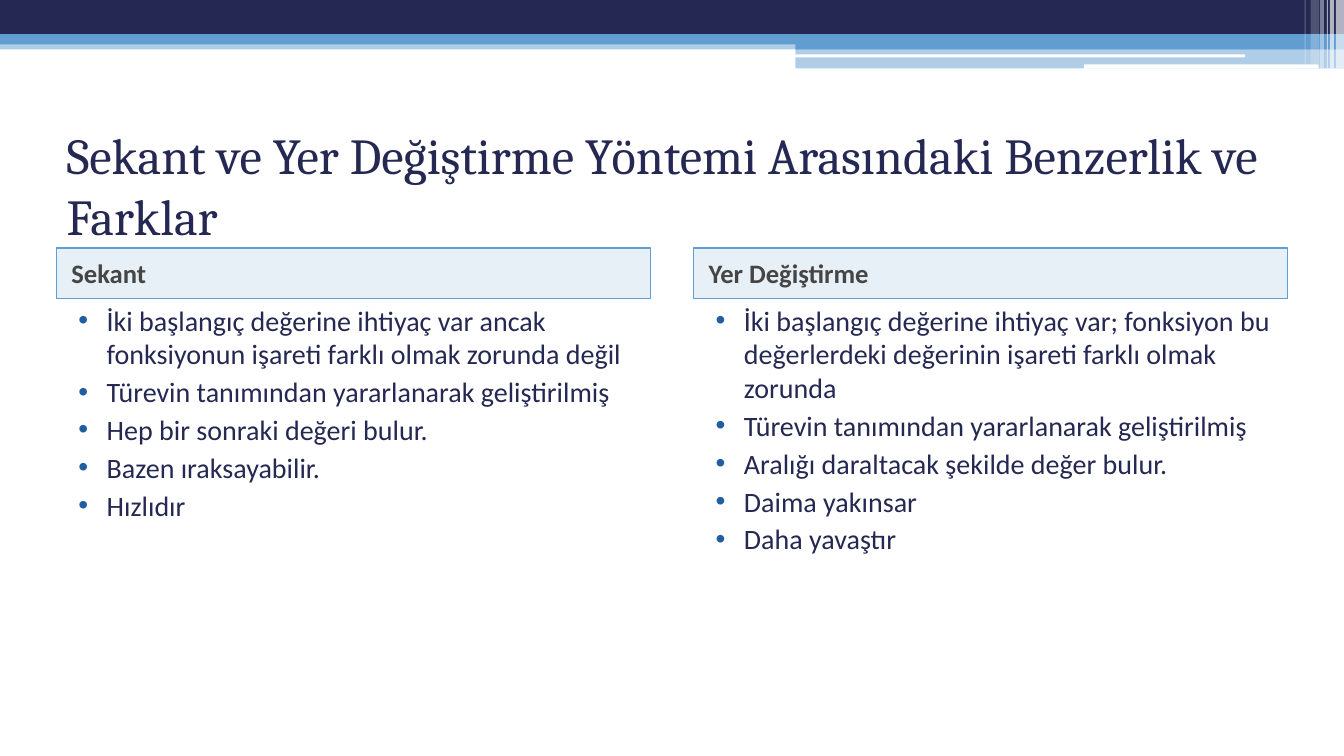
from lxml.etree import SubElement as Sub
from pptx import Presentation as Deck
from pptx.dml.color import RGBColor as RGB
from pptx.enum.shapes import MSO_SHAPE as Form
from pptx.enum.text import MSO_ANCHOR as Anchor, MSO_AUTO_SIZE as Fit, PP_ALIGN as Align
from pptx.oxml.ns import qn
from pptx.util import Inches, Pt

NAVY = RGB(0x24, 0x28, 0x52)
BLUE = RGB(0x62, 0x9D, 0xD1)
PALE = RGB(0xA1, 0xC4, 0xE3)
DOT = RGB(0x1F, 0x5F, 0xA0)
GRAY = RGB(0x45, 0x45, 0x45)
WHITE = RGB(0xFF, 0xFF, 0xFF)

COLS, ROWS = 1333, 750
HEAD, BODY = "Cambria", "Calibri"

BANDS = [
    (0, 40, 1333, 9, BLUE, 50),
    (0, 0, 1333, 34, NAVY, 100),
    (0, 34, 1333, 10, BLUE, 100),
    (789, 39, 544, 10, BLUE, 100),
    (789, 48, 544, 20, BLUE, 50),
]
SLOTS = [(788, 54, 447, 3), (1075, 64, 233, 4)]
STRIPES = [
    (1325, 8, 68, 65), (1319, 4, 68, 65), (1316, 1, 68, 60),
    (1309, 4, 68, 40), (1300, 8, 64, 20), (1294, 1, 64, 30),
]
TITLE = "Sekant ve Yer Değiştirme Yöntemi Arasındaki Benzerlik ve Farklar"
SIDES = [
    ("Sekant", [
        "İki başlangıç değerine ihtiyaç var ancak fonksiyonun işareti farklı olmak zorunda değil",
        "Türevin tanımından yararlanarak geliştirilmiş",
        "Hep bir sonraki değeri bulur.",
        "Bazen ıraksayabilir.",
        "Hızlıdır",
    ]),
    ("Yer Değiştirme", [
        "İki başlangıç değerine ihtiyaç var; fonksiyon bu değerlerdeki değerinin işareti farklı olmak zorunda",
        "Türevin tanımından yararlanarak geliştirilmiş",
        "Aralığı daraltacak şekilde değer bulur.",
        "Daima yakınsar",
        "Daha yavaştır",
    ]),
]


class Page:
    def __init__(self, deck):
        self.wide = deck.slide_width / COLS
        self.high = deck.slide_height / ROWS
        self.slide = deck.slides.add_slide(deck.slide_layouts[5])

    def place(self, x, y, w, h):
        return [round(n) for n in (x * self.wide, y * self.high, w * self.wide, h * self.high)]

    def block(self, x, y, w, h, color, solid=100, form=Form.RECTANGLE):
        shape = self.slide.shapes.add_shape(form, *self.place(x, y, w, h))
        shape.shadow.inherit = False
        shape.fill.solid()
        shape.fill.fore_color.rgb = color
        shape.line.fill.background()
        if solid < 100:
            tint = shape.element.spPr.find(qn("a:solidFill"))[0]
            Sub(tint, qn("a:alpha"), val=str(solid * 1000))
        return shape

    def say(self, para, text, size, color, font=BODY, bold=False):
        para.alignment = Align.LEFT
        run = para.add_run()
        run.text = text
        run.font.name = font
        run.font.size = Pt(size)
        run.font.bold = bold
        run.font.color.rgb = color

    def indent(self, para, left, first=0):
        para.space_before = Pt(3)
        props = para._p.get_or_add_pPr()
        props.set("marL", str(Inches(left)))
        props.set("indent", str(Inches(first)))
        return props

    def title(self, text, x, y, w, h):
        shape = self.slide.shapes.title
        shape.left, shape.top, shape.width, shape.height = self.place(x, y, w, h)
        frame = shape.text_frame
        frame.word_wrap = True
        frame.auto_size = Fit.NONE
        frame.vertical_anchor = Anchor.MIDDLE
        self.say(frame.paragraphs[0], text, 36, NAVY, HEAD)

    def label(self, text, x, y, w, h):
        shape = self.block(x, y, w, h, PALE, 25)
        shape.line.color.rgb = BLUE
        shape.line.width = Pt(1)
        frame = shape.text_frame
        frame.vertical_anchor = Anchor.MIDDLE
        para = frame.paragraphs[0]
        self.indent(para, 0.05)
        self.say(para, text, 19, GRAY, bold=True)

    def points(self, items, x, y, w, h):
        frame = self.slide.shapes.add_textbox(*self.place(x, y, w, h)).text_frame
        frame.word_wrap = True
        for i, item in enumerate(items):
            para = frame.add_paragraph() if i else frame.paragraphs[0]
            props = self.indent(para, 0.4, -0.28)
            tint = Sub(props, qn("a:buClr"))
            Sub(tint, qn("a:srgbClr"), val=str(DOT))
            Sub(props, qn("a:buFont"), typeface="Arial")
            Sub(props, qn("a:buChar"), char="•")
            self.say(para, item, 20, NAVY)


def main():
    deck = Deck()
    deck.slide_width, deck.slide_height = Inches(13.33), Inches(7.5)
    page = Page(deck)
    for band in BANDS:
        page.block(*band)
    for slot in SLOTS:
        page.block(*slot, WHITE, form=Form.ROUNDED_RECTANGLE)
    for x, w, h, solid in STRIPES:
        page.block(x, 0, w, h, WHITE, solid)
    page.title(TITLE, 56, 125, 1222, 117)
    for i, (name, items) in enumerate(SIDES):
        x = 56 + i * 632
        page.label(name, x, 246, 589, 50)
        page.points(items, x, 296, 589, 425)
    deck.save("out.pptx")


if __name__ == "__main__":
    main()
